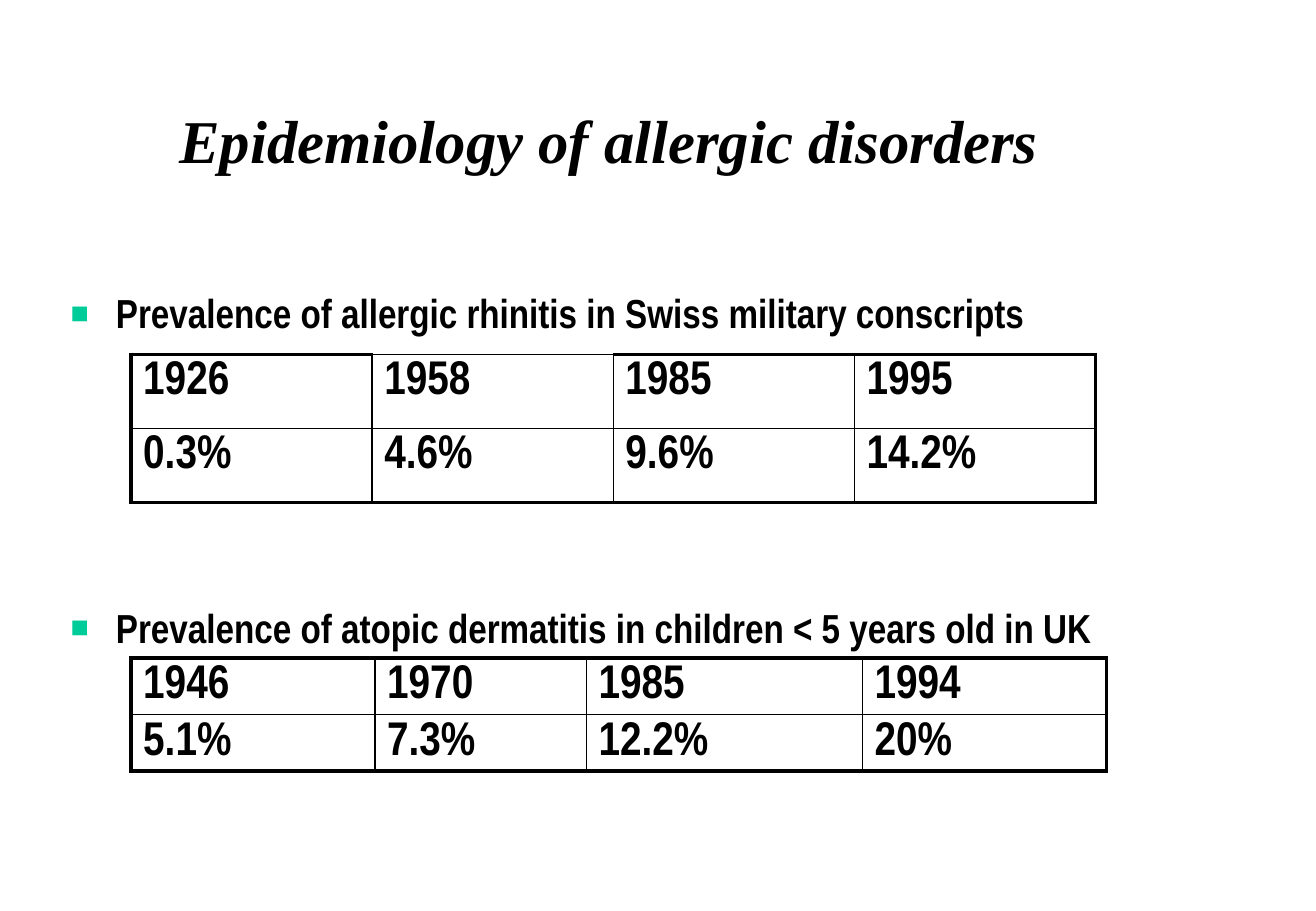
from lxml.etree import SubElement
from pptx import Presentation
from pptx.dml.color import RGBColor
from pptx.enum.text import MSO_ANCHOR, PP_ALIGN
from pptx.oxml import parse_xml
from pptx.oxml.ns import nsdecls, qn
from pptx.util import Cm, Pt

BLACK = RGBColor(0x00, 0x00, 0x00)
GREEN = RGBColor(0x00, 0xCC, 0x99)
HEADING_FONT, TEXT_FONT = "Times New Roman", "Arial Narrow"
THICK, THIN = Pt(2.25), Pt(1)

HEADING = "Epidemiology of allergic disorders"
STUDIES = [
    {
        "topic": "Prevalence of allergic rhinitis in Swiss military conscripts",
        "rows": [("1926", "1958", "1985", "1995"), ("0.3%", "4.6%", "9.6%", "14.2%")],
        "top": 7.41, "row_height": 1.55, "widths": (5.04, 5.04, 5.04, 5.04),
        "thin_tops": {"1958"},
    },
    {
        "topic": "Prevalence of atopic dermatitis in children < 5 years old in UK",
        "rows": [("1946", "1970", "1985", "1994"), ("5.1%", "7.3%", "12.2%", "20%")],
        "top": 13.76, "row_height": 1.18, "widths": (5.1, 4.42, 5.77, 5.1),
        "thin_tops": set(),
    },
]
TABLE_LEFT = 2.74
TOPIC_GAP = Pt(157.5)


def place(placeholder, left, top, width, height):
    placeholder.left, placeholder.top = Cm(left), Cm(top)
    placeholder.width, placeholder.height = Cm(width), Cm(height)


def set_font(paragraph, name, size, italic=False):
    font = paragraph.font
    font.name, font.size, font.bold, font.italic = name, Pt(size), True, italic
    font.color.rgb = BLACK


def add_bullet(paragraph):
    properties = paragraph._p.get_or_add_pPr()
    properties.set("marL", str(Cm(0.95)))
    properties.set("indent", str(-Cm(0.95)))
    color = SubElement(properties, qn("a:buClr"))
    SubElement(color, qn("a:srgbClr"), val=str(GREEN))
    SubElement(properties, qn("a:buSzPct"), val="75000")
    SubElement(properties, qn("a:buChar"), char="■")


def set_borders(cell, widths):
    properties = cell._tc.get_or_add_tcPr()
    for index, (side, width) in enumerate(zip("LRTB", widths)):
        properties.insert(index, parse_xml(
            f'<a:ln{side} {nsdecls("a")} w="{width}"><a:solidFill>'
            f'<a:srgbClr val="{BLACK}"/></a:solidFill></a:ln{side}>'))


def add_study_table(slide, study):
    rows, widths = study["rows"], study["widths"]
    last_row, last_column = len(rows) - 1, len(widths) - 1
    table = slide.shapes.add_table(
        len(rows), len(widths), Cm(TABLE_LEFT), Cm(study["top"]),
        Cm(sum(widths)), Cm(study["row_height"] * len(rows))).table
    table.first_row = table.horz_banding = False
    for column, width in zip(table.columns, widths):
        column.width = Cm(width)
    for r, values in enumerate(rows):
        table.rows[r].height = Cm(study["row_height"])
        for c, value in enumerate(values):
            cell = table.cell(r, c)
            cell.text = value
            set_font(cell.text_frame.paragraphs[0], TEXT_FONT, 28)
            cell.fill.background()
            outer = (c == 0, c == last_column,
                     r == 0 and value not in study["thin_tops"], r == last_row)
            set_borders(cell, [THICK if edge else THIN for edge in outer])


def main():
    deck = Presentation()
    deck.slide_width, deck.slide_height = Cm(27.51), Cm(19.05)
    slide = deck.slides.add_slide(deck.slide_layouts[1])

    title, body = slide.placeholders
    place(title, 2.34, 1.7, 20.78, 2.11)
    title.text_frame.text = HEADING
    title.text_frame.vertical_anchor = MSO_ANCHOR.BOTTOM
    heading = title.text_frame.paragraphs[0]
    heading.alignment = PP_ALIGN.CENTER
    set_font(heading, HEADING_FONT, 36, italic=True)

    place(body, 1.22, 5.9, 25.37, 12.4)
    body.text_frame.text = "\n".join(study["topic"] for study in STUDIES)
    for index, topic in enumerate(body.text_frame.paragraphs):
        topic.space_before = TOPIC_GAP if index else Pt(0)
        add_bullet(topic)
        set_font(topic, TEXT_FONT, 24)

    for study in STUDIES:
        add_study_table(slide, study)

    deck.save("out.pptx")


if __name__ == "__main__":
    main()
